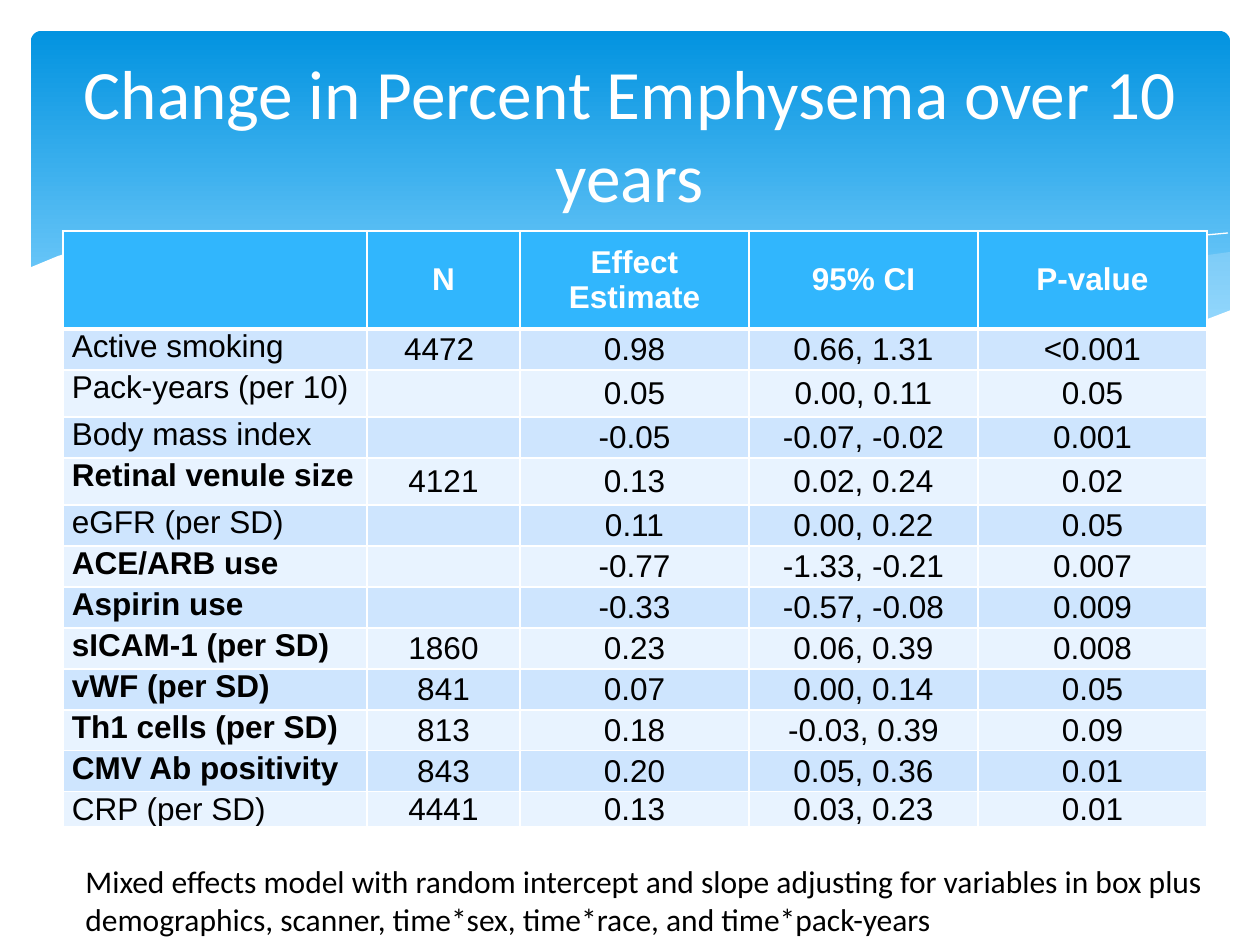
from lxml.etree import SubElement
from pptx import Presentation
from pptx.dml.color import RGBColor
from pptx.enum.shapes import MSO_SHAPE
from pptx.enum.text import MSO_ANCHOR, PP_ALIGN
from pptx.oxml.ns import qn
from pptx.util import Pt

PX = 914400 / 126

RIGHT_SWELL = [
    (1199, 221), (1163, 226), (1129, 234), (1092, 241), (1054, 250), (983, 268),
    (918, 281), (859, 293), (802, 303), (857, 310), (908, 315), (953, 318),
    (995, 319), (1045, 317), (1089, 312), (1129, 303), (1165, 293), (1199, 280),
]
LONG_SWELL = [
    (1094, 313), (1024, 303), (945, 289), (859, 271), (762, 249), (705, 235),
    (651, 225), (602, 216), (526, 207), (448, 202), (382, 205), (329, 210),
    (400, 220), (478, 235), (535, 249), (637, 271), (726, 290), (807, 304),
    (879, 314), (943, 318), (1000, 319), (1049, 318),
]
FALLING_CREST = [
    (358, 215), (402, 208), (457, 205), (515, 205), (585, 208), (670, 217),
    (770, 231), (885, 254), (1016, 285), (1112, 312),
]
RISING_CREST = [
    (741, 293), (816, 273), (911, 250), (985, 234), (1060, 220), (1133, 208),
    (1197, 202),
]
WHITE_WAVE = [
    (1200, 279), (1166, 292), (1128, 303), (1087, 310), (1040, 316), (988, 318),
    (928, 316), (861, 309), (785, 299), (699, 284), (603, 263), (532, 246),
    (462, 230), (397, 217), (337, 208), (284, 203), (235, 201), (192, 201),
    (153, 202), (119, 205), (89, 210), (53, 217), (27, 225), (-2, 237),
    (-2, 384), (1200, 384),
]

COLUMN_WIDTHS = [304, 153, 229, 229, 229]
ROW_HEIGHTS = [98, 41, 47, 41, 47] + [41] * 7 + [35]
HEADINGS = ["", "N", "Effect Estimate", "95% CI", "P-value"]
PREDICTORS = [
    ["Active smoking", "4472 ", "0.98", "0.66, 1.31", "<0.001"],
    ["Pack-years (per 10)", "", "0.05", "0.00, 0.11", "0.05"],
    ["Body mass index", "", "-0.05", "-0.07, -0.02", "0.001"],
    ["Retinal venule size", "4121", "0.13", "0.02, 0.24", "0.02"],
    ["eGFR (per SD)", "", "0.11", "0.00, 0.22", "0.05"],
    ["ACE/ARB use", "", "-0.77", "-1.33, -0.21", "0.007"],
    ["Aspirin use", "", "-0.33", "-0.57, -0.08", "0.009"],
    ["sICAM-1 (per SD)", "1860", "0.23", "0.06, 0.39", "0.008"],
    ["vWF (per SD)", "841", "0.07", "0.00, 0.14", "0.05"],
    ["Th1 cells (per SD)", "813", "0.18", "-0.03, 0.39", "0.09"],
    ["CMV Ab positivity", "843", "0.20", "0.05, 0.36", "0.01"],
    ["CRP (per SD)", "4441", "0.13", "0.03, 0.23", "0.01"],
]
BOLD_ROWS = {4, 6, 7, 8, 9, 10, 11}


def px(length):
    """Turn px into EMU."""
    return round(length * PX)


def color(value):
    """Turn a hex string into a colour."""
    return RGBColor.from_string(value)


def format_text(paragraph, size, font, ink, bold=False, align=PP_ALIGN.LEFT):
    """Format a paragraph and its runs."""
    paragraph.alignment = align
    for part in [paragraph, *paragraph.runs]:
        part.font.size = Pt(size)
        part.font.name = font
        part.font.bold = bold
        part.font.color.rgb = color(ink)


def add_wave(slide, left, top, points, fill=None, alpha=100):
    """Draw a filled wave, or a white hairline crest when no fill is given."""
    builder = slide.shapes.build_freeform(*points[0], scale=PX)
    builder.add_line_segments(points[1:], close=fill is not None)
    wave = builder.convert_to_shape(px(left), px(top))
    wave.shadow.inherit = False
    if fill is None:
        wave.fill.background()
        wave.line.color.rgb = color("FFFFFF")
        wave.line.width = Pt(0)
        return
    wave.line.fill.background()
    wave.fill.solid()
    wave.fill.fore_color.rgb = color(fill)
    if alpha < 100:
        tint = wave.fill._xPr.find(qn("a:solidFill"))[0]
        SubElement(tint, qn("a:alpha"), val=str(alpha * 1000))


def add_banner(slide, left, top, width, height):
    """Draw the blue gradient banner and the waves along its foot."""
    banner = slide.shapes.add_shape(
        MSO_SHAPE.ROUNDED_RECTANGLE, px(left), px(top), px(width), px(height))
    banner.adjustments[0] = 0.03
    banner.shadow.inherit = False
    banner.line.fill.background()
    banner.fill.gradient()
    banner.fill.gradient_angle = 270
    stops = [(0, "0293E0"), (0.9, "83D3FE")]
    for stop, (position, tint) in zip(banner.fill.gradient_stops, stops):
        stop.position = position
        stop.color.rgb = color(tint)
    add_wave(slide, left, top, RIGHT_SWELL, "C6E7FC", 29)
    add_wave(slide, left, top, LONG_SWELL, "C6E7FC", 40)
    add_wave(slide, left, top, FALLING_CREST)
    add_wave(slide, left, top, RISING_CREST)
    add_wave(slide, left, top, WHITE_WAVE, "FFFFFF")


def add_title(slide, left, top, width, height):
    """Place the title in front of the banner."""
    title = slide.shapes.title
    slide.shapes._spTree.append(title._element)
    title.left, title.top = px(left), px(top)
    title.width, title.height = px(width), px(height)
    title.text_frame.text = "Change in Percent Emphysema over 10 years"
    title.text_frame.vertical_anchor = MSO_ANCHOR.MIDDLE
    format_text(title.text_frame.paragraphs[0], 39.6, "Calibri", "FFFFFF",
                align=PP_ALIGN.CENTER)


def add_borders(cell, bottom_width):
    """Give a cell white borders, with its own width at the bottom."""
    properties = cell._tc.get_or_add_tcPr()
    for side, width in (("L", 1), ("R", 1), ("T", 1), ("B", bottom_width)):
        border = SubElement(properties, qn("a:ln" + side), w=str(Pt(width)))
        SubElement(SubElement(border, qn("a:solidFill")), qn("a:srgbClr"), val="FFFFFF")


def add_estimates(slide, left, top):
    """Build the table of effect estimates."""
    rows = [HEADINGS, *PREDICTORS]
    table = slide.shapes.add_table(
        len(rows), len(HEADINGS), px(left), px(top),
        px(sum(COLUMN_WIDTHS)), px(sum(ROW_HEIGHTS))).table
    for column, width in zip(table.columns, COLUMN_WIDTHS):
        column.width = px(width)
    for row, height in zip(table.rows, ROW_HEIGHTS):
        row.height = px(height)
    for r, entries in enumerate(rows):
        header = r == 0
        fill = "31B6FD" if header else ("E8F3FF", "CEE5FE")[r % 2]
        border_below = 3 if header else 1
        for c, entry in enumerate(entries):
            label = c == 0
            cell = table.cell(r, c)
            cell.margin_left = cell.margin_right = px(9)
            cell.margin_top = cell.margin_bottom = 0
            cell.vertical_anchor = MSO_ANCHOR.TOP if label else MSO_ANCHOR.MIDDLE
            add_borders(cell, border_below)
            cell.fill.solid()
            cell.fill.fore_color.rgb = color(fill)
            cell.text_frame.text = entry
            format_text(cell.text_frame.paragraphs[0], 18, "Arial",
                        "FFFFFF" if header else "000000",
                        header or (label and r in BOLD_ROWS),
                        PP_ALIGN.LEFT if label else PP_ALIGN.CENTER)


def add_model_note(slide, left, top, width, height):
    """Write the note on the statistical model."""
    note = slide.shapes.add_textbox(px(left), px(top), px(width), px(height)).text_frame
    note.word_wrap = True
    note.text = ("Mixed effects model with random intercept and slope adjusting for "
                 "variables in box plus demographics, scanner, time*sex, time*race, "
                 "and time*pack-years")
    format_text(note.paragraphs[0], 18, "Calibri", "000000")


def main():
    """Build the slide and save it."""
    presentation = Presentation()
    presentation.slide_width, presentation.slide_height = px(1260), px(945)
    slide = presentation.slides.add_slide(presentation.slide_layouts[5])
    add_banner(slide, 31, 31, 1199, 340)
    add_title(slide, 63, 47, 1134, 173)
    add_estimates(slide, 63, 231)
    add_model_note(slide, 73, 856, 1176, 89)
    presentation.save("out.pptx")


if __name__ == "__main__":
    main()
